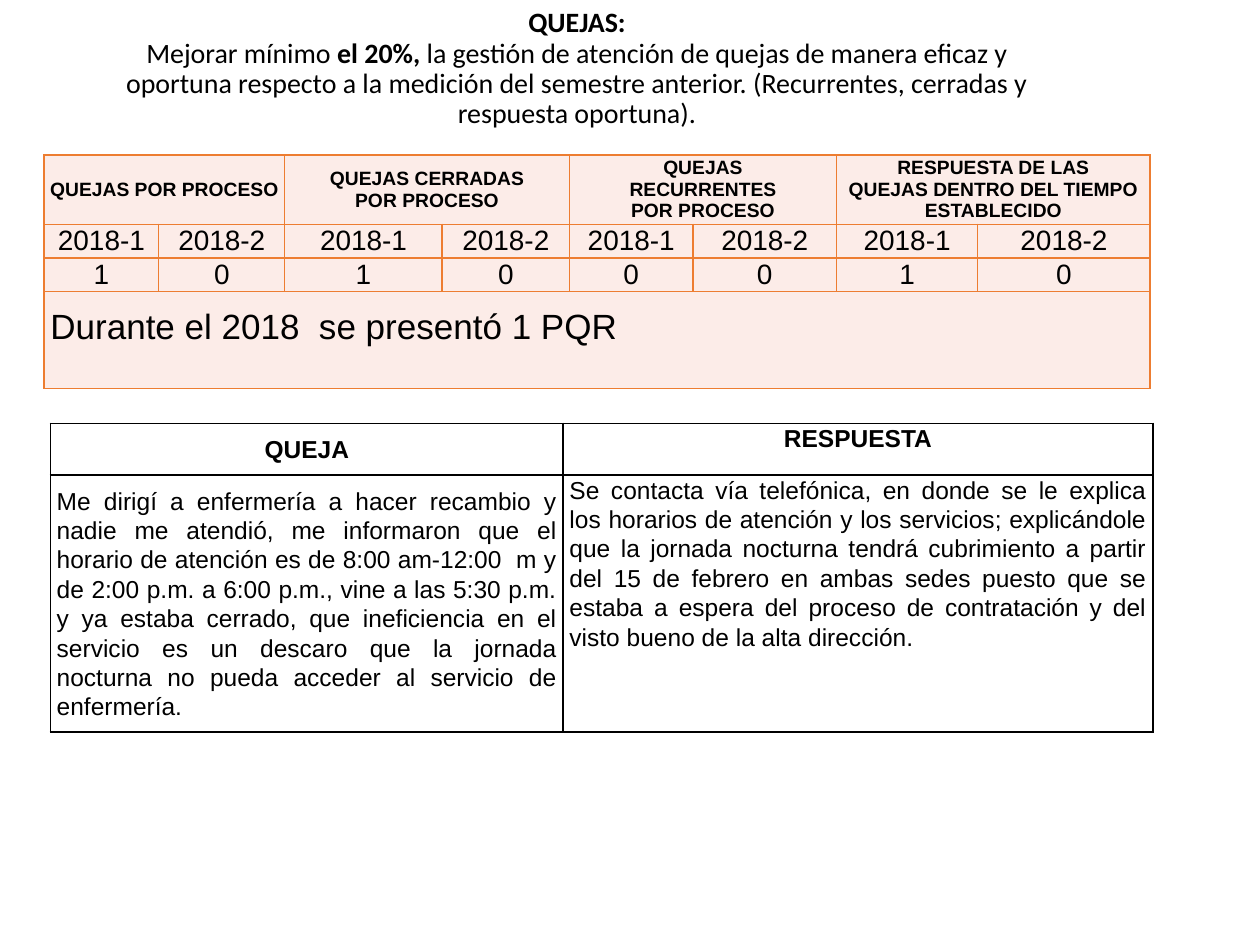
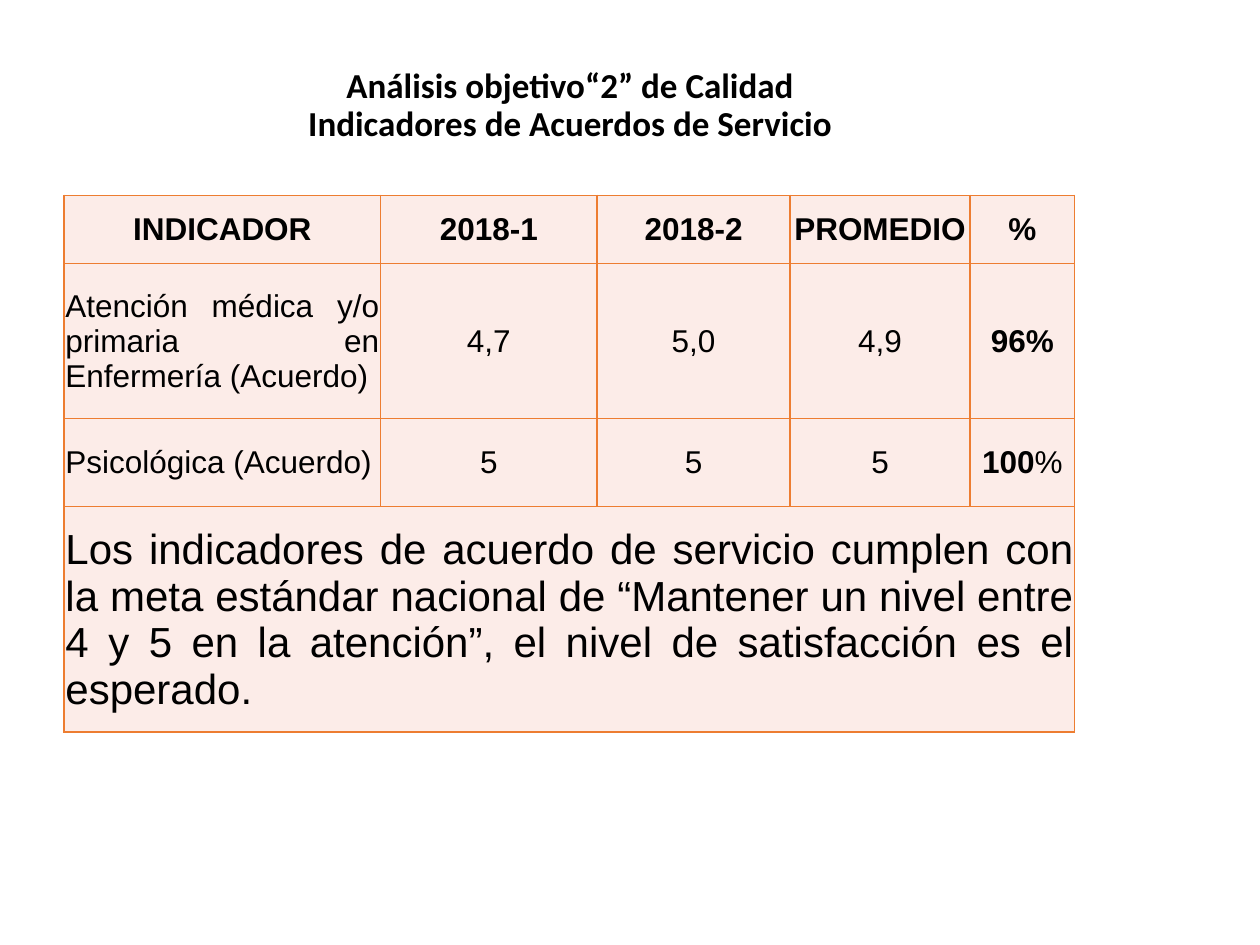
from lxml import etree
from pptx import Presentation
from pptx.dml.color import RGBColor
from pptx.enum.text import MSO_ANCHOR, PP_ALIGN
from pptx.oxml.ns import qn
from pptx.util import Inches, Pt

CENTER, JUSTIFY = PP_ALIGN.CENTER, PP_ALIGN.JUSTIFY
TOP, MIDDLE = MSO_ANCHOR.TOP, MSO_ANCHOR.MIDDLE
BLACK, WHITE, ORANGE, BLUSH = "000000", "FFFFFF", "ED7D31", "FCECE8"
TITLE_FONT, TABLE_FONT = "Calibri", "Arial"
PERIODS = ["2018-1", "2018-2"]


def color(code):
    return RGBColor.from_string(code)


def write(frame, text, font, size, align, spacing=1.0, bold=False):
    """One paragraph per line; **marks** switch to bold."""
    for index, line in enumerate(text.split("\n")):
        para = frame.paragraphs[0] if index == 0 else frame.add_paragraph()
        para.alignment = align
        para.line_spacing = spacing
        para.font.name = font
        para.font.size = Pt(size)
        para.font.color.rgb = color(BLACK)
        pieces = [(piece, bold or number % 2 == 1)
                  for number, piece in enumerate(line.split("**")) if piece]
        weights = {heavy for _, heavy in pieces}
        if len(weights) == 1:
            para.font.bold = weights.pop()
        for piece, heavy in pieces:
            span = para.add_run()
            span.text = piece
            if para.font.bold is None:
                span.font.bold = heavy


# Content: a title and its tables for each page; None continues a merged cell
complaints = {
    "at": (0.35, 1.23), "border": ORANGE, "fill": BLUSH, "spacing": 1.0,
    "columns": [0.91, 1, 1.25, 1.01, 0.98, 1.14, 1.12, 1.37],
    "rows": [0.49, 0.24, 0.24, 0.77], "sizes": [11, 16, 16, 20],
    "insets": (0, 0, 0, 0), "note_insets": (0.05, 0, 0, 0.2),
    "cells": [
        ["QUEJAS POR PROCESO", None,
         "QUEJAS CERRADAS\nPOR PROCESO", None,
         "QUEJAS\nRECURRENTES\nPOR PROCESO", None,
         "RESPUESTA DE LAS\nQUEJAS DENTRO DEL TIEMPO ESTABLECIDO", None],
        PERIODS * 4,
        ["1", "0", "1", "0", "0", "0", "1", "0"],
        ["Durante el 2018  se presentó 1 PQR"] + [None] * 7,
    ],
}
answers = {
    "at": (0.4, 3.36), "border": BLACK, "fill": WHITE, "spacing": 1.07,
    "columns": [4.07, 4.68], "rows": [0.41, 2.04], "sizes": [14, 14],
    "insets": (0.05, 0, 0.05, 0), "top_column": 1,
    "cells": [
        ["QUEJA", "RESPUESTA"],
        ["Me dirigí a enfermería a hacer recambio y nadie me atendió, me "
         "informaron que el horario de atención es de 8:00 am-12:00  m y de "
         "2:00 p.m. a 6:00 p.m., vine a las 5:30 p.m. y ya estaba cerrado, "
         "que ineficiencia en el servicio es un descaro que la jornada "
         "nocturna no pueda acceder al servicio de enfermería.",
         "Se contacta vía telefónica, en donde se le explica los horarios de "
         "atención y los servicios; explicándole que la jornada nocturna "
         "tendrá cubrimiento a partir del 15 de febrero en ambas sedes puesto "
         "que se estaba a espera del proceso de contratación y del visto "
         "bueno de la alta dirección."],
    ],
}
indicators = {
    "at": (0.51, 1.55), "border": ORANGE, "fill": BLUSH, "spacing": 1.0,
    "columns": [2.51, 1.72, 1.53, 1.43, 0.83],
    "rows": [0.54, 1.23, 0.7, 1.79], "sizes": [18, 18, 18, 24],
    "insets": (0.01, 0.01, 0.01, 0),
    "cells": [
        ["INDICADOR", *PERIODS, "PROMEDIO", "%"],
        ["Atención médica y/o primaria en Enfermería (Acuerdo)",
         "4,7", "5,0", "4,9", "**96%**"],
        ["Psicológica (Acuerdo)", "5", "5", "5", "**100**%"],
        ["Los indicadores de acuerdo de servicio cumplen con la meta estándar "
         "nacional de “Mantener un nivel entre 4 y 5 en la atención”, el nivel "
         "de satisfacción es el esperado."] + [None] * 4,
    ],
}
pages = [
    {"title": "**QUEJAS:**\nMejorar mínimo **el 20%,** la gestión de atención "
              "de quejas de manera eficaz y oportuna respecto a la medición del "
              "semestre anterior. (Recurrentes, cerradas y respuesta oportuna).",
     "at": (0.83, -0.11, 7.5, 1.57), "size": 16, "bottom": 0.3,
     "tables": [complaints, answers]},
    {"title": "**Análisis objetivo“2” de Calidad**\n"
              "**Indicadores de Acuerdos de Servicio**",
     "at": (1.3, 0.29, 6.45, 1.1), "size": 20, "bottom": 0.05,
     "tables": [indicators]},
]

deck = Presentation()
deck.slide_width, deck.slide_height = Inches(10), Inches(7.5)

for content in pages:
    page = deck.slides.add_slide(deck.slide_layouts[6])

    # Title
    box = page.shapes.add_textbox(*map(Inches, content["at"]))
    frame = box.text_frame
    frame.word_wrap = True
    frame.vertical_anchor = MIDDLE
    frame.margin_bottom = Inches(content["bottom"])
    write(frame, content["title"], TITLE_FONT, content["size"], CENTER, 0.9)

    # Tables
    for spec_table in content["tables"]:
        widths, heights = spec_table["columns"], spec_table["rows"]
        extent = (*spec_table["at"], sum(widths), sum(heights))
        table = page.shapes.add_table(
            len(heights), len(widths), *map(Inches, extent)).table
        table.first_row = table.horz_banding = False
        for column, width in zip(table.columns, widths):
            column.width = Inches(width)
        for row, height in zip(table.rows, heights):
            row.height = Inches(height)

        for r, texts in enumerate(spec_table["cells"]):
            for c, text in enumerate(texts):
                cell = table.cell(r, c)
                cell.fill.solid()
                cell.fill.fore_color.rgb = color(spec_table["fill"])

                # Cell borders go before the fill
                properties = cell._tc.get_or_add_tcPr()
                for order, side in enumerate(("lnL", "lnR", "lnT", "lnB")):
                    line = etree.Element(qn("a:" + side), w=str(Pt(1)))
                    solid = etree.SubElement(line, qn("a:solidFill"))
                    etree.SubElement(solid, qn("a:srgbClr"),
                                     val=spec_table["border"])
                    properties.insert(order, line)
                if text is None:
                    continue

                # A text followed by None spans those columns
                end = c + 1
                while end < len(texts) and texts[end] is None:
                    end += 1
                if end > c + 1:
                    cell.merge(table.cell(r, end - 1))

                insets = spec_table["insets"]
                if end - c == len(texts):
                    insets = spec_table.get("note_insets", insets)
                (cell.margin_left, cell.margin_top,
                 cell.margin_right, cell.margin_bottom) = map(Inches, insets)
                at_top = c == spec_table.get("top_column")
                cell.vertical_anchor = TOP if at_top else MIDDLE
                is_prose = r > 0 and len(text) > 10
                write(cell.text_frame, text, TABLE_FONT, spec_table["sizes"][r],
                      JUSTIFY if is_prose else CENTER,
                      spec_table["spacing"], bold=r == 0)

deck.save("out.pptx")
